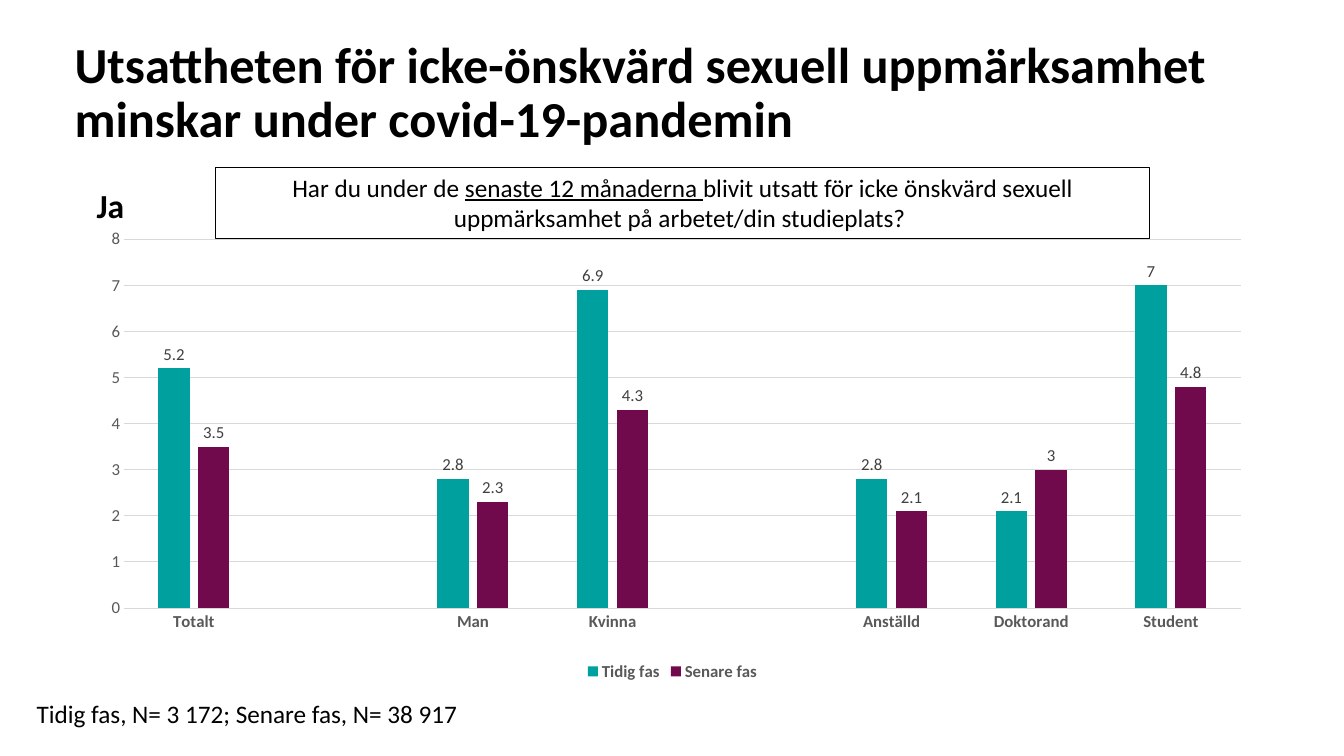
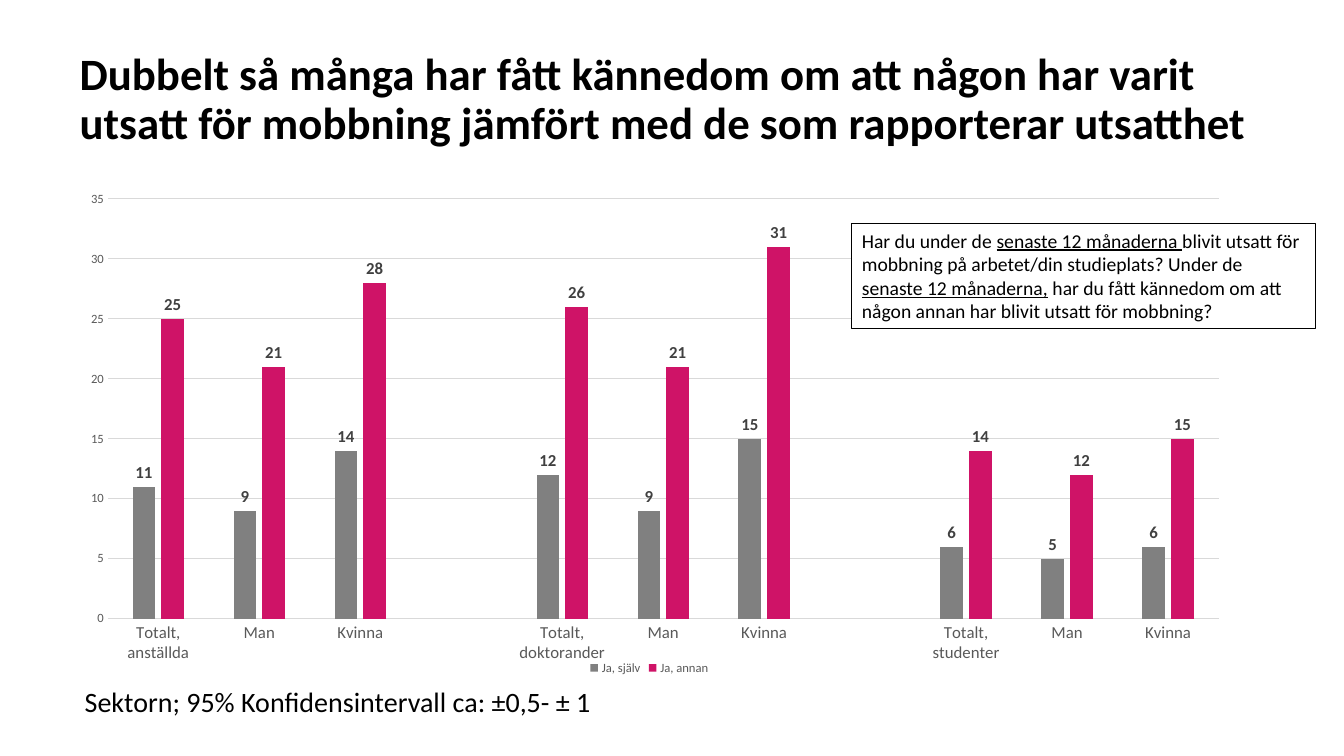
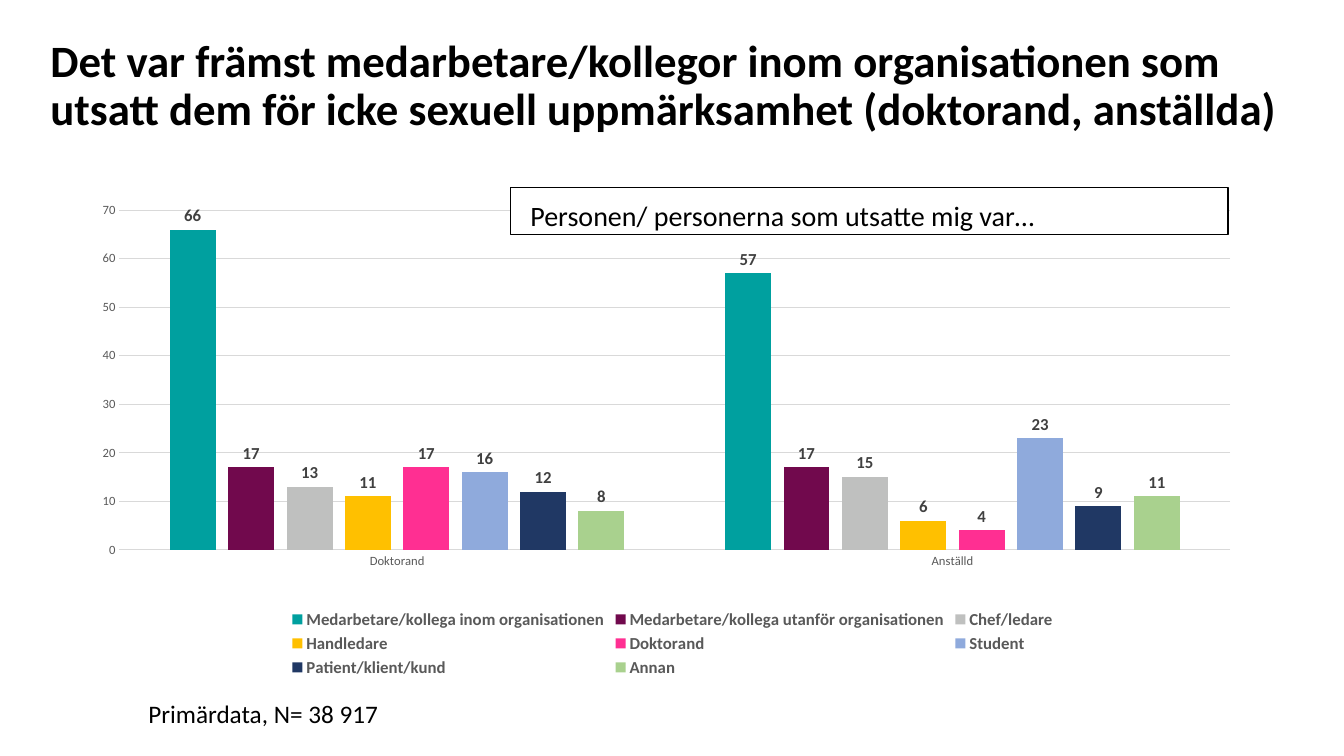
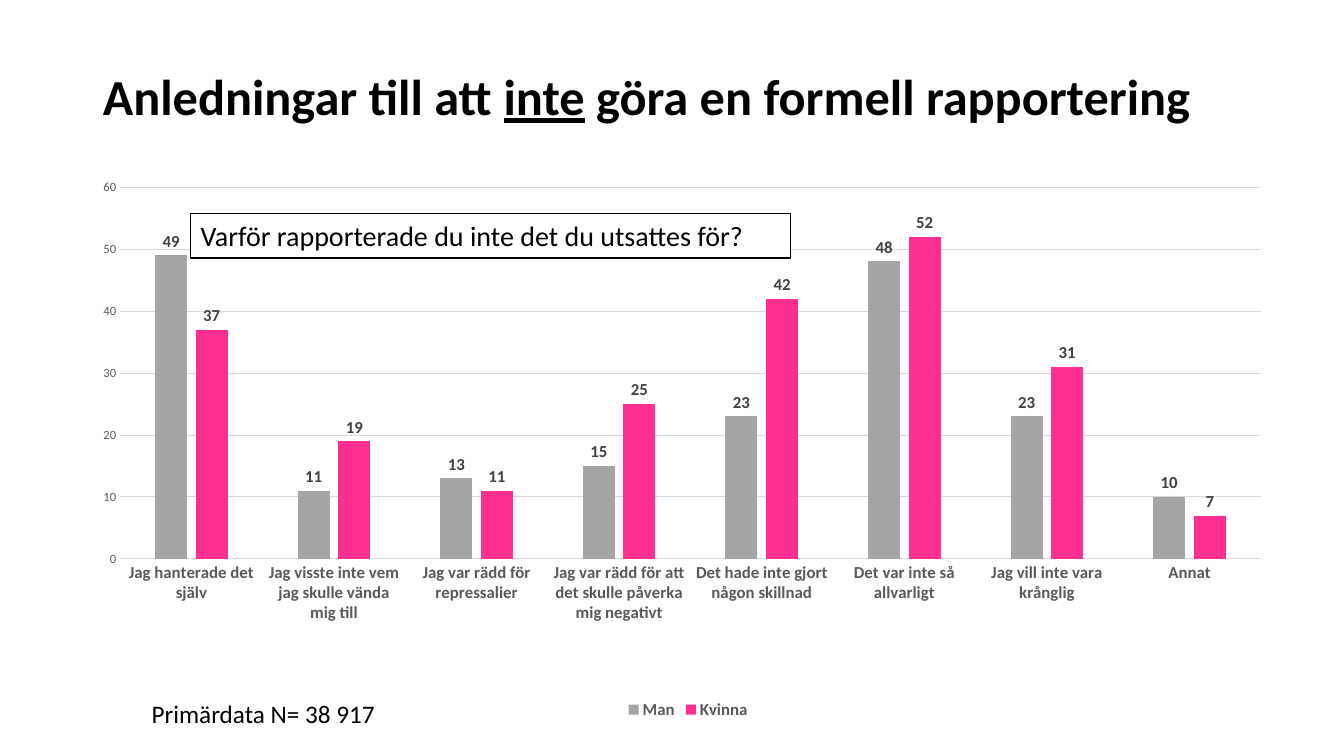
"""Build four slides on exposure and reporting, each with a column chart."""
from pptx import Presentation
from pptx.chart.data import CategoryChartData
from pptx.dml.color import RGBColor
from pptx.enum.chart import XL_CHART_TYPE, XL_LABEL_POSITION, XL_LEGEND_POSITION, XL_TICK_MARK
from pptx.enum.text import MSO_ANCHOR, MSO_AUTO_SIZE, PP_ALIGN
from pptx.oxml import parse_xml
from pptx.oxml.ns import nsdecls, qn
from pptx.util import Inches, Pt

FONT = "Calibri"
BLACK = RGBColor(0x00, 0x00, 0x00)
WHITE = RGBColor(0xFF, 0xFF, 0xFF)
DARK = RGBColor(0x40, 0x40, 0x40)
GREY = RGBColor(0x59, 0x59, 0x59)
PALE = RGBColor(0xD9, 0xD9, 0xD9)
TEAL = RGBColor(0x00, 0xA0, 0x9F)
PLUM = RGBColor(0x71, 0x09, 0x4D)
STONE = RGBColor(0x80, 0x80, 0x80)
ROSE = RGBColor(0xCF, 0x13, 0x67)
SILVER = RGBColor(0xBF, 0xC0, 0xBF)
GOLD = RGBColor(0xFF, 0xC0, 0x00)
PINK = RGBColor(0xFF, 0x2F, 0x92)
SKY = RGBColor(0x8F, 0xAA, 0xDC)
NAVY = RGBColor(0x20, 0x38, 0x64)
GREEN = RGBColor(0xA9, 0xD1, 0x8E)
ASH = RGBColor(0xA5, 0xA5, 0xA5)

# Text between underscores is underlined.
SLIDES = [
    dict(
        title=("Utsattheten för icke-önskvärd sexuell uppmärksamhet minskar under covid-19-pandemin",
               (0.64, 0.21, 12.04, 1.45), 36),
        ask=("Har du under de _senaste 12 månaderna _blivit utsatt för icke önskvärd sexuell "
             "uppmärksamhet på arbetet/din studieplats? ",
             (2.14, 1.66, 9.26, 0.71), dict(size=18, align=PP_ALIGN.CENTER)),
        label=("Ja", (0.86, 1.79, 0.48, 0.5)),
        foot=("Tidig fas, N= 3 172; Senare fas, N= 38 917", 2.45, 7.1, 18),
        chart=dict(
            at=(0.92, 2.04, 11.5, 4.76), plot=(0.027, 0.07, 0.963, 0.769), top=8, step=1,
            cat=(12, True), val=12, key=(12, True), bold=False,
            names=["Totalt", "", "Man", "Kvinna", "", "Anställd", "Doktorand", "Student"],
            rows=[("Tidig fas", TEAL, [5.2, None, 2.8, 6.9, None, 2.8, 2.1, 7]),
                  ("Senare fas", PLUM, [3.5, None, 2.3, 4.3, None, 2.1, 3, 4.8])]),
    ),
    dict(
        title=("Dubbelt så många har fått kännedom om att någon har varit utsatt för mobbning "
               "jämfört med de som rapporterar utsatthet", (0.69, 0.27, 11.98, 1.45), 32),
        ask=("Har du under de _senaste 12 månaderna _blivit utsatt för mobbning på arbetet/din "
             "studieplats? Under de _senaste 12 månaderna,_ har du fått kännedom om att någon "
             "annan har blivit utsatt för mobbning?",
             (8.45, 2.22, 4.6, 1.04), dict(size=14, fill=WHITE)),
        foot=("Sektorn; 95% Konfidensintervall ca: ±0,5- ± 1", 3.35, 6.98, 20),
        chart=dict(
            at=(0.69, 1.78, 11.5, 4.96), plot=(0.033, 0.039, 0.958, 0.84), top=35, step=5,
            cat=(12, False), val=9, key=(9, False), bold=True,
            names=["Totalt, anställda", "Man", "Kvinna", "", "Totalt, doktorander", "Man",
                   "Kvinna", "", "Totalt, studenter", "Man", "Kvinna"],
            rows=[("Ja, själv", STONE, [11, 9, 14, None, 12, 9, 15, None, 6, 5, 6]),
                  ("Ja, annan", ROSE, [25, 21, 28, None, 26, 21, 31, None, 14, 12, 15])]),
    ),
    dict(
        title=("Det var främst medarbetare/kollegor inom organisationen som utsatt dem för icke "
               "sexuell uppmärksamhet (doktorand, anställda)", (0.4, 0.14, 12.79, 1.45), 32),
        ask=("Personen/ personerna som utsatte mig var…", (5.06, 1.86, 7.12, 0.47),
             dict(size=20, fill=WHITE, left=0.2, space=1.17, before=2.8)),
        foot=("Primärdata, N= 38 917", 2.61, 7.1, 18),
        chart=dict(
            at=(0.92, 2, 11.5, 4.76), plot=(0.023, 0.018, 0.958, 0.708), top=70, step=10,
            cat=(9, False), val=9, key=(12, True), bold=True,
            names=["Doktorand", "Anställd"],
            rows=[("Medarbetare/kollega inom organisationen", TEAL, [66, 57]),
                  ("Medarbetare/kollega utanför organisationen", PLUM, [17, 17]),
                  ("Chef/ledare", SILVER, [13, 15]),
                  ("Handledare", GOLD, [11, 6]),
                  ("Doktorand", PINK, [17, 4]),
                  ("Student", SKY, [16, 23]),
                  ("Patient/klient/kund", NAVY, [12, 9]),
                  ("Annan", GREEN, [8, 11])]),
    ),
    dict(
        title=("Anledningar till att _inte_ göra en formell rapportering",
               (0.92, 0.26, 11.5, 1.45), 36),
        ask=("Varför rapporterade du inte det du utsattes för?", (1.89, 2.12, 5.95, 0.44),
             dict(size=20, fill=WHITE)),
        foot=("Primärdata N= 38 917", 2.61, 7.1, 18),
        chart=dict(
            at=(0.92, 1.77, 11.81, 5.41), plot=(0.023, 0.016, 0.958, 0.682), top=60, step=10,
            cat=(12, True), val=9, key=(12, True), bold=True,
            names=["Jag hanterade det själv", "Jag visste inte vem jag skulle vända mig till",
                   "Jag var rädd för repressalier",
                   "Jag var rädd för att det skulle påverka mig negativt",
                   "Det hade inte gjort någon skillnad", "Det var inte så allvarligt",
                   "Jag vill inte vara krånglig", "Annat"],
            rows=[("Man", ASH, [49, 11, 13, 15, 23, 48, 23, 10]),
                  ("Kvinna", PINK, [37, 19, 11, 25, 42, 52, 31, 7])]),
    ),
]


def style(font, size, color=BLACK, bold=False):
    font.name, font.size, font.bold = FONT, Pt(size), bold
    font.color.rgb = color


def write(shape, text, size=18, bold=False, align=PP_ALIGN.LEFT, anchor=MSO_ANCHOR.TOP,
          space=1.0, before=0, left=0.1, wrap=True, fill=None, line=None):
    frame = shape.text_frame
    frame.word_wrap, frame.auto_size = wrap, MSO_AUTO_SIZE.NONE
    frame.vertical_anchor, frame.margin_left = anchor, Inches(left)
    para = frame.paragraphs[0]
    para.alignment, para.line_spacing, para.space_before = align, space, Pt(before)
    for i, part in enumerate(text.split("_")):
        run = para.add_run()
        run.text = part
        style(run.font, size, bold=bold)
        if i % 2:
            run.font.underline = True
    if fill is not None:
        shape.fill.solid()
        shape.fill.fore_color.rgb = fill
    if line is not None:
        shape.line.color.rgb, shape.line.width = line, Pt(0.75)


def box(slide, at, text, **look):
    write(slide.shapes.add_textbox(*map(Inches, at)), text, **look)


def head(slide, text, at, size):
    title = slide.shapes.title
    title.left, title.top, title.width, title.height = map(Inches, at)
    write(title, text, size=size, bold=True, anchor=MSO_ANCHOR.MIDDLE, space=0.9)


def foot(slide, text, mid, row, size):
    box(slide, (0, row - 0.2, 2 * mid, 0.4), text, size=size, space=0.9,
        align=PP_ALIGN.CENTER, anchor=MSO_ANCHOR.MIDDLE)


def place(chart, plot):
    area = chart._chartSpace.chart.plotArea
    for old in area.findall(qn("c:layout")):
        area.remove(old)
    edges = "".join(f'<c:{k}Mode val="edge"/>' for k in "xy")
    sizes = "".join(f'<c:{k} val="{v}"/>' for k, v in zip("xywh", plot))
    area.insert(0, parse_xml(
        f'<c:layout {nsdecls("c")}><c:manualLayout><c:layoutTarget val="inner"/>'
        f'{edges}{sizes}</c:manualLayout></c:layout>'))


def graph(slide, at, plot, top, step, cat, val, key, bold, names, rows):
    data = CategoryChartData()
    data.categories = names
    for name, _, vals in rows:
        data.add_series(name, vals)
    chart = slide.shapes.add_chart(
        XL_CHART_TYPE.COLUMN_CLUSTERED, *map(Inches, at), data).chart
    style(chart.font, 10)
    chart.has_title = False
    chart.has_legend = True
    chart.legend.position = XL_LEGEND_POSITION.BOTTOM
    chart.legend.include_in_layout = False
    style(chart.legend.font, key[0], GREY, key[1])

    xs, ys = chart.category_axis, chart.value_axis
    style(xs.tick_labels.font, cat[0], GREY, cat[1])
    style(ys.tick_labels.font, val, GREY)
    for axis in (xs, ys):
        axis.major_tick_mark = axis.minor_tick_mark = XL_TICK_MARK.NONE
    ys.minimum_scale, ys.maximum_scale, ys.major_unit = 0, top, step
    ys.format.line.fill.background()
    for line in (xs.format.line, ys.major_gridlines.format.line):
        line.color.rgb, line.width = PALE, Pt(0.75)

    bars = chart.plots[0]
    bars.gap_width, bars.overlap, bars.vary_by_categories = 219, -27, False
    for item, (_, color, _) in zip(bars.series, rows):
        item.format.fill.solid()
        item.format.fill.fore_color.rgb = color
        item.invert_if_negative = False
        tags = item.data_labels
        tags.show_value, tags.position = True, XL_LABEL_POSITION.OUTSIDE_END
        style(tags.font, 12, DARK, bold)
    place(chart, plot)


def main():
    deck = Presentation()
    deck.slide_width, deck.slide_height = Inches(13.33), Inches(7.5)
    for page in SLIDES:
        slide = deck.slides.add_slide(deck.slide_layouts[5])
        head(slide, *page["title"])
        graph(slide, **page["chart"])
        foot(slide, *page["foot"])
        text, at, look = page["ask"]
        box(slide, at, text, line=BLACK, **look)
        if "label" in page:
            text, at = page["label"]
            box(slide, at, text, size=24, bold=True, wrap=False)
    deck.save("out.pptx")


if __name__ == "__main__":
    main()
